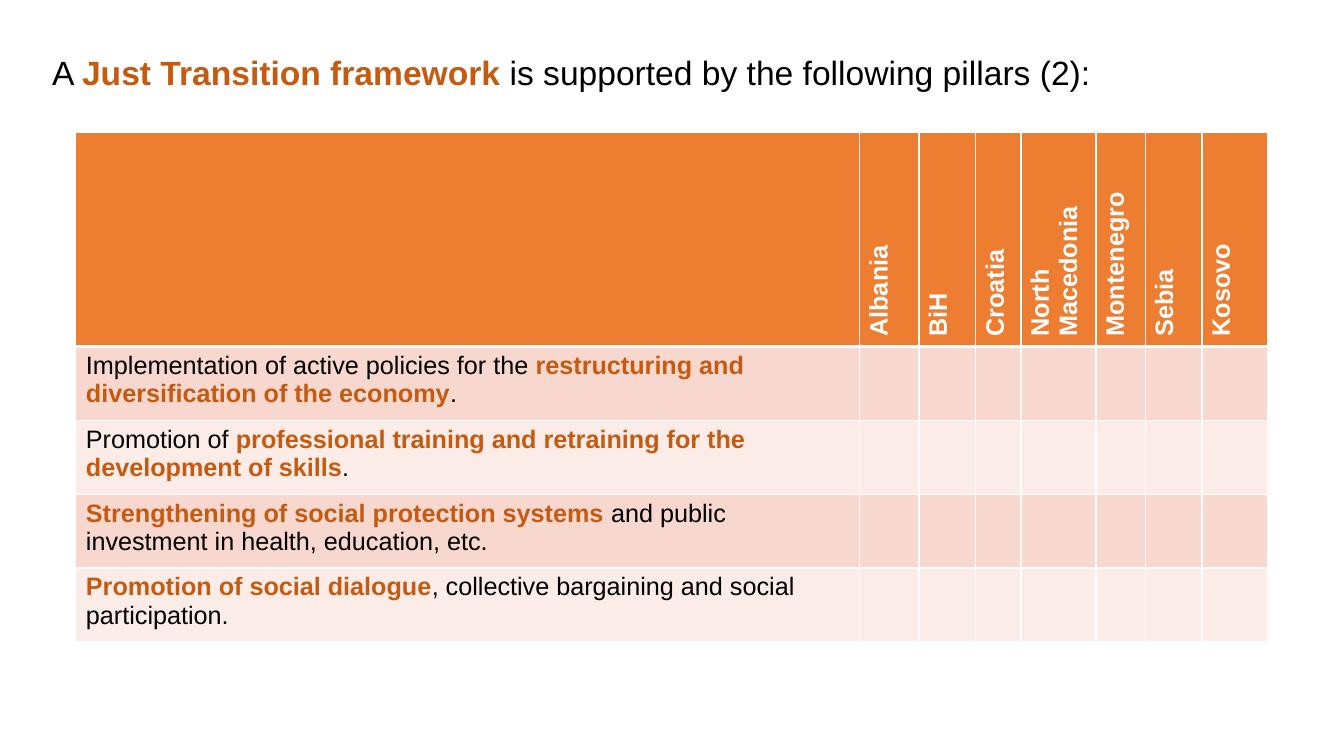
from dataclasses import dataclass

from lxml.etree import SubElement
from pptx import Presentation
from pptx.dml.color import RGBColor
from pptx.oxml.ns import qn
from pptx.util import Pt

BLACK = RGBColor(0x00, 0x00, 0x00)
WHITE = RGBColor(0xFF, 0xFF, 0xFF)
RUST = RGBColor(0xC5, 0x5A, 0x11)
ORANGE = RGBColor(0xED, 0x7D, 0x31)
BANDS = (RGBColor(0xF8, 0xD7, 0xCE), RGBColor(0xFC, 0xEC, 0xE8))
FONT = "Arial"


@dataclass(frozen=True)
class Country:
    name: str
    width: float


@dataclass(frozen=True)
class Phrase:
    before: str
    key: str
    after: str


TITLE = Phrase("A ", "Just Transition framework", " is supported by the following pillars (2):")
COUNTRIES = [
    Country("Albania", 42.3),
    Country("BiH", 40.6),
    Country("Croatia", 32.3),
    Country("North Macedonia", 53.5),
    Country("Montenegro", 35.2),
    Country("Sebia", 40.6),
    Country("Kosovo", 46.8),
]
PILLARS = [
    Phrase("Implementation of active policies for the ",
           "restructuring and diversification of the economy", "."),
    Phrase("Promotion of ",
           "professional training and retraining for the development of skills", "."),
    Phrase("", "Strengthening of social protection systems ",
           "and public investment in health, education, etc."),
    Phrase("", "Promotion of social dialogue",
           ", collective bargaining and social participation."),
]
PILLAR_WIDTH, HEADER_HEIGHT, ROW_HEIGHT = 560, 118, 52.7


def add_run(p, text: str, size: float, color: RGBColor, bold: bool) -> None:
    r = p.add_run()
    r.text = text
    r.font.name = FONT
    r.font.size = Pt(size)
    r.font.bold = bold
    r.font.color.rgb = color


def write_phrase(p, phrase: Phrase, size: float) -> None:
    for text, color, bold in (
        (phrase.before, BLACK, False),
        (phrase.key, RUST, True),
        (phrase.after, BLACK, False),
    ):
        if text:
            add_run(p, text, size, color, bold)


def style_cell(cell, fill: RGBColor, top: float, bottom: float) -> None:
    tc_pr = cell._tc.get_or_add_tcPr()
    for side, width in (("L", 1), ("R", 1), ("T", top), ("B", bottom)):
        ln = SubElement(tc_pr, qn(f"a:ln{side}"), w=str(Pt(width)))
        SubElement(SubElement(ln, qn("a:solidFill")), qn("a:srgbClr"), val=str(WHITE))
    cell.fill.solid()
    cell.fill.fore_color.rgb = fill


def add_title(s) -> None:
    box = s.shapes.add_textbox(Pt(30.2), Pt(33.8), Pt(908.6), Pt(46))
    tf = box.text_frame
    tf.word_wrap = True
    write_phrase(tf.paragraphs[0], TITLE, 24)


def add_pillar_table(s) -> None:
    widths = [PILLAR_WIDTH] + [c.width for c in COUNTRIES]
    heights = [HEADER_HEIGHT] + [ROW_HEIGHT] * len(PILLARS)
    table = s.shapes.add_table(
        len(heights), len(widths), Pt(54.2), Pt(94.3), Pt(sum(widths)), Pt(sum(heights))
    ).table
    for column, width in zip(table.columns, widths):
        column.width = Pt(width)
    for i, (row, height) in enumerate(zip(table.rows, heights)):
        row.height = Pt(height)
        fill = BANDS[(i - 1) % 2] if i else ORANGE
        for cell in row.cells:
            style_cell(cell, fill, 3 if i == 1 else 1, 1 if i else 3)
    for col, country in enumerate(COUNTRIES, 1):
        cell = table.cell(0, col)
        cell._tc.get_or_add_tcPr().set("vert", "vert270")
        add_run(cell.text_frame.paragraphs[0], country.name, 18, WHITE, True)
    for i, pillar in enumerate(PILLARS, 1):
        write_phrase(table.cell(i, 0).text_frame.paragraphs[0], pillar, 18)


def main() -> None:
    prs = Presentation()
    prs.slide_width, prs.slide_height = Pt(960), Pt(540)
    s = prs.slides.add_slide(prs.slide_layouts[6])
    add_title(s)
    add_pillar_table(s)
    prs.save("out.pptx")


if __name__ == "__main__":
    main()
